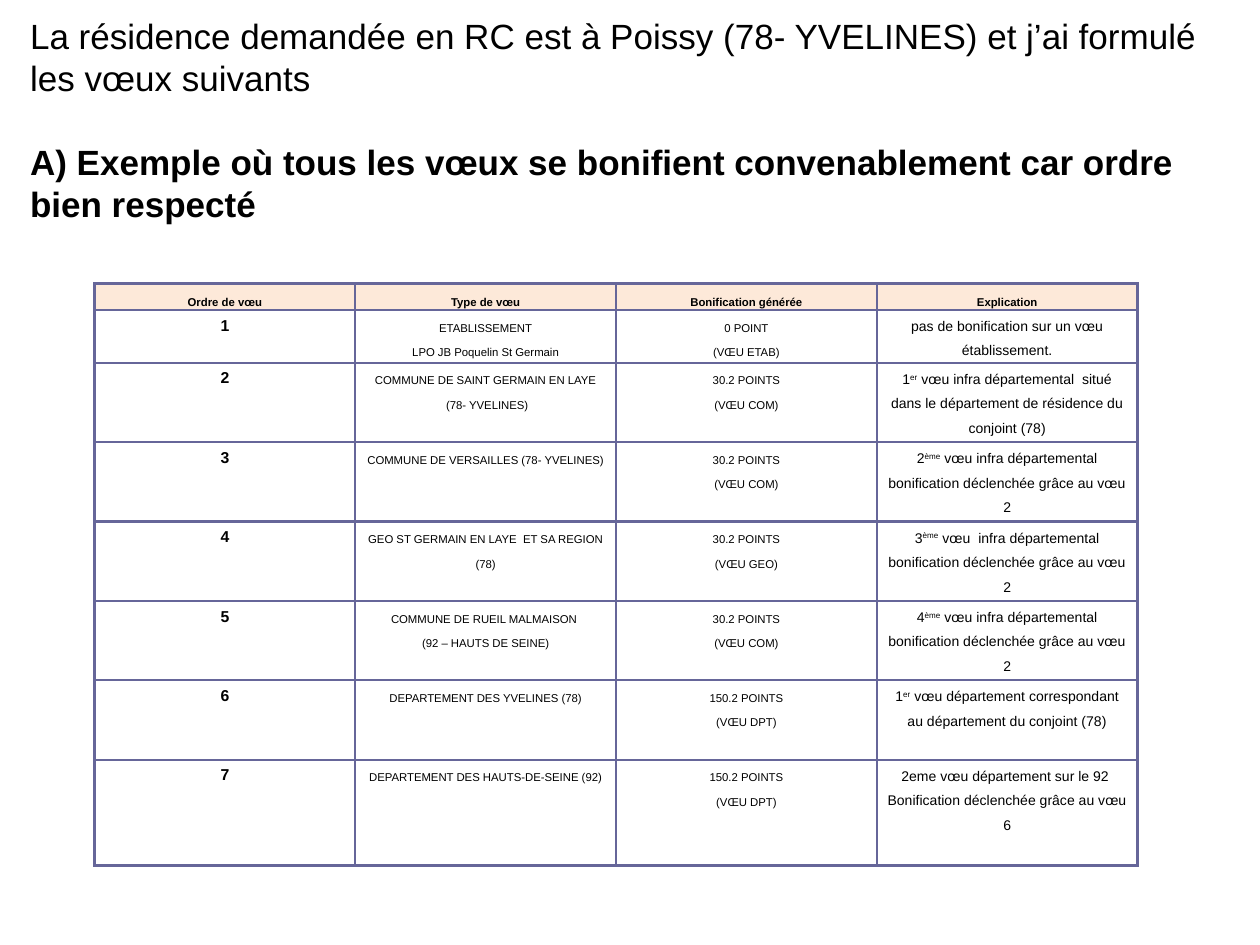
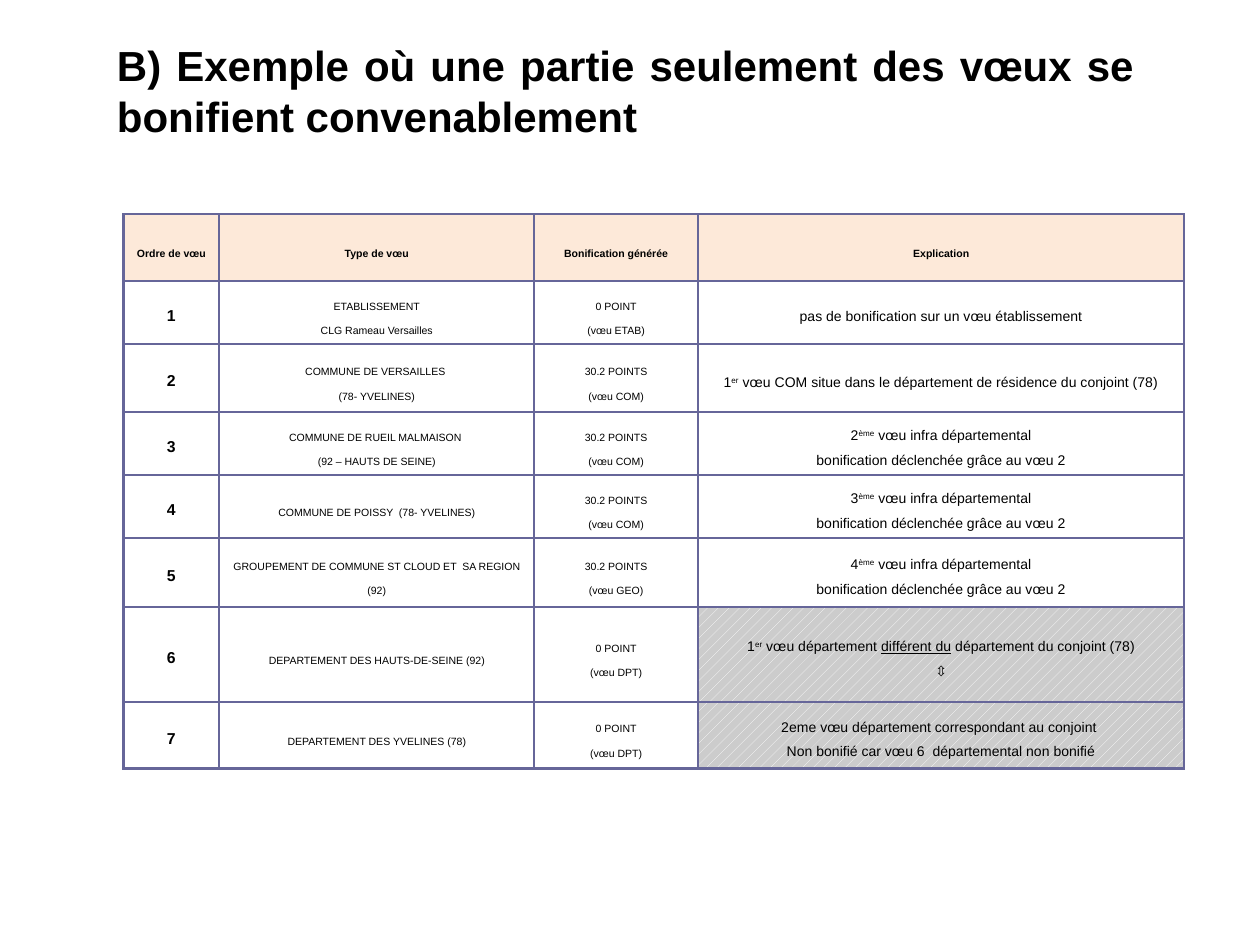
"""Build two slides comparing how the order of transfer wishes affects their bonus points."""
from dataclasses import dataclass
from typing import NamedTuple

import lxml.etree
import pptx
import pptx.dml.color
import pptx.enum.dml
import pptx.enum.text
import pptx.oxml.ns
import pptx.util
from pptx.util import Inches

BLACK = pptx.dml.color.RGBColor(0x00, 0x00, 0x00)
WHITE = pptx.dml.color.RGBColor(0xFF, 0xFF, 0xFF)
HEADER_FILL = pptx.dml.color.RGBColor(0xFD, 0xE9, 0xD9)
WARNING_FILL = pptx.dml.color.RGBColor(0xCC, 0xCC, 0xCC)
BORDER = pptx.dml.color.RGBColor(0x66, 0x66, 0x99)

FONT = "Arial"
HEADERS = ("Ordre de vœu", "Type de vœu", "Bonification générée", "Explication")
ORDER_SIZE = 9
EXPLANATION_SIZE = 8
CELL_LINE_SPACING = 14
TITLE_LINE_RATIO = 1.2

Align = pptx.enum.text.PP_ALIGN
Anchor = pptx.enum.text.MSO_ANCHOR


class Run(NamedTuple):
    """A stretch of text with one style."""

    text: str
    superscript: bool = False
    underline: bool = False


Line = tuple[Run, ...]


class TextStyle(NamedTuple):
    """The look of a paragraph."""

    size: float
    bold: bool
    alignment: Align
    line_spacing: float


class Wish(NamedTuple):
    """One table row: the wish, its bonus and the reason."""

    kind: tuple[str, ...]
    points: str
    scope: str
    explanation: tuple[Line, ...]
    warning: bool = False


@dataclass(frozen=True)
class WishTable:
    """A table of ranked wishes."""

    left: float
    top: float
    column_widths: tuple[float, ...]
    row_heights: tuple[float, ...]
    small_size: float
    body_anchor: Anchor
    wish_word: str
    wishes: tuple[Wish, ...]


@dataclass(frozen=True)
class Title:
    """A slide title whose paragraphs are (text, bold) pairs."""

    box: tuple[float, float, float, float]
    size: float
    alignment: Align
    paragraphs: tuple[tuple[str, bool], ...]


def plain(*texts: str) -> tuple[Line, ...]:
    """Turn each text into a line of one run."""
    return tuple((Run(text),) for text in texts)


def ordinal(number: int, rest: str) -> Line:
    """Write a French ordinal with its raised ending, then the rest."""
    return Run(str(number)), Run("er" if number == 1 else "ème", superscript=True), Run(rest)


def triggered(number: int, rest: str = " vœu infra départemental") -> tuple[Line, ...]:
    """Explain a bonus that wish 2 sets off."""
    return ordinal(number, rest), *plain("bonification déclenchée grâce au vœu 2")


RUEIL = ("COMMUNE DE RUEIL MALMAISON ", "(92 – HAUTS DE SEINE)")
YVELINES = ("DEPARTEMENT DES YVELINES (78)",)
HAUTS_DE_SEINE = ("DEPARTEMENT DES HAUTS-DE-SEINE (92)",)

GOOD_TITLE = Title(
    (0.14, 0.06, 9.49, 1.78), 20, Align.LEFT,
    (("La résidence demandée en RC est à Poissy (78- YVELINES) et j’ai formulé les vœux suivants", False),
     ("A) Exemple où tous les vœux se bonifient convenablement car ordre bien respecté ", True)),
)
GOOD_ORDER = WishTable(
    0.75, 2.25, (2.07,) * 4, (0.21, 0.42, *(0.63,) * 5, 0.84), 6.5, Anchor.TOP, "VŒU",
    (
        Wish(("ETABLISSEMENT", "LPO JB Poquelin St Germain"), "0 POINT", "ETAB",
             plain("pas de bonification sur un vœu établissement.")),
        Wish(("COMMUNE DE SAINT GERMAIN EN LAYE", " (78- YVELINES)"), "30.2 POINTS", "COM",
             (ordinal(1, " vœu infra départemental  situé dans le département de résidence du conjoint (78)"),)),
        Wish(("COMMUNE DE VERSAILLES (78- YVELINES)",), "30.2 POINTS", "COM", triggered(2)),
        Wish(("GEO ST GERMAIN EN LAYE  ET SA REGION (78)",), "30.2 POINTS", "GEO",
             triggered(3, " vœu  infra départemental")),
        Wish(RUEIL, "30.2 POINTS", "COM", triggered(4)),
        Wish(YVELINES, "150.2 POINTS", "DPT",
             (ordinal(1, " vœu département correspondant au département du conjoint (78)"),)),
        Wish(HAUTS_DE_SEINE, "150.2 POINTS", "DPT",
             plain("2eme vœu département sur le 92 ", "Bonification déclenchée grâce au vœu 6")),
    ),
)

PARTIAL_TITLE = Title(
    (0.83, 0.26, 8.27, 0.91), 24, Align.JUSTIFY,
    (("B) Exemple où une partie seulement des vœux se bonifient convenablement ", True),),
)
PARTIAL_ORDER = WishTable(
    0.98, 1.7, (0.76, 2.5, 1.3, 3.86), (0.53, 0.5, 0.54, 0.5, 0.5, 0.55, 0.75, 0.53),
    6, Anchor.MIDDLE, "vœu",
    (
        Wish(("ETABLISSEMENT", "CLG Rameau Versailles"), "0 POINT", "ETAB",
             plain("pas de bonification sur un vœu établissement")),
        Wish(("COMMUNE DE VERSAILLES ", "(78- YVELINES)"), "30.2 POINTS", "COM",
             (ordinal(1, " vœu COM situe dans le département de résidence du conjoint (78)"),)),
        Wish(RUEIL, "30.2 POINTS", "COM", triggered(2)),
        Wish(("COMMUNE DE POISSY  (78- YVELINES)",), "30.2 POINTS", "COM", triggered(3)),
        Wish(("GROUPEMENT DE COMMUNE ST CLOUD ET  SA REGION (92)",), "30.2 POINTS", "GEO", triggered(4)),
        Wish(HAUTS_DE_SEINE, "0 POINT", "DPT",
             ((*ordinal(1, " vœu département "), Run("différent du", underline=True),
               Run(" département du conjoint (78)")), *plain("⇳")), warning=True),
        Wish(YVELINES, "0 POINT", "DPT",
             plain("2eme vœu département correspondant au conjoint ",
                   "Non bonifié car vœu 6  départemental non bonifié"), warning=True),
    ),
)


def write_line(paragraph: pptx.text.text._Paragraph, line: Line, style: TextStyle) -> None:
    """Fill a paragraph run by run."""
    paragraph.alignment = style.alignment
    paragraph.line_spacing = pptx.util.Pt(style.line_spacing)
    for part in line:
        run = paragraph.add_run()
        run.text = part.text
        run.font.name = FONT
        run.font.size = pptx.util.Pt(style.size)
        run.font.bold = style.bold
        run.font.color.rgb = BLACK
        if part.underline:
            run.font.underline = True
        if part.superscript:
            run.font._element.set("baseline", "30000")


def add_title(slide: pptx.slide.Slide, title: Title) -> None:
    """Add the title, with one empty line's height between paragraphs."""
    frame = slide.shapes.add_textbox(*map(Inches, title.box)).text_frame
    frame.word_wrap = True
    frame.vertical_anchor = Anchor.MIDDLE
    line_spacing = title.size * TITLE_LINE_RATIO
    for index, (text, bold) in enumerate(title.paragraphs):
        paragraph = frame.add_paragraph() if index else frame.paragraphs[0]
        write_line(paragraph, (Run(text),), TextStyle(title.size, bold, title.alignment, line_spacing))
        if index:
            paragraph.space_before = pptx.util.Pt(line_spacing)


def add_borders(cell: pptx.table._Cell) -> None:
    """Draw the four borders of a cell."""
    properties = cell._tc.get_or_add_tcPr()
    qualified = pptx.oxml.ns.qn
    for side in ("a:lnL", "a:lnR", "a:lnT", "a:lnB"):
        border = lxml.etree.SubElement(properties, qualified(side), w=str(pptx.util.Pt(1.5)))
        fill = lxml.etree.SubElement(border, qualified("a:solidFill"))
        lxml.etree.SubElement(fill, qualified("a:srgbClr"), val=str(BORDER))


def fill_cell(cell: pptx.table._Cell, lines: tuple[Line, ...], size: float, bold: bool, anchor: Anchor) -> None:
    """Write centred lines in a bordered cell without fill."""
    cell.margin_left = cell.margin_right = Inches(0.07)
    cell.margin_top = cell.margin_bottom = 0
    cell.vertical_anchor = anchor
    add_borders(cell)
    cell.fill.background()
    style = TextStyle(size, bold, Align.CENTER, CELL_LINE_SPACING)
    for index, line in enumerate(lines):
        paragraph = cell.text_frame.add_paragraph() if index else cell.text_frame.paragraphs[0]
        write_line(paragraph, line, style)


def add_wish_table(slide: pptx.slide.Slide, content: WishTable) -> None:
    """Add the header row and one row for each wish."""
    table = slide.shapes.add_table(
        len(content.row_heights), len(HEADERS), Inches(content.left), Inches(content.top),
        Inches(sum(content.column_widths)), Inches(sum(content.row_heights)),
    ).table
    table.first_row = table.horz_banding = False
    for column, width in zip(table.columns, content.column_widths):
        column.width = Inches(width)
    for row, height in zip(table.rows, content.row_heights):
        row.height = Inches(height)

    for index, header in enumerate(HEADERS):
        cell = table.cell(0, index)
        fill_cell(cell, plain(header), content.small_size, True, Anchor.MIDDLE)
        cell.fill.solid()
        cell.fill.fore_color.rgb = HEADER_FILL

    for rank, wish in enumerate(content.wishes, start=1):
        bonus = plain(wish.points, f"({content.wish_word} {wish.scope})")
        columns = (
            (plain(str(rank)), ORDER_SIZE, True),
            (plain(*wish.kind), content.small_size, False),
            (bonus, content.small_size, False),
            (wish.explanation, EXPLANATION_SIZE, False),
        )
        for index, (lines, size, bold) in enumerate(columns):
            fill_cell(table.cell(rank, index), lines, size, bold, content.body_anchor)
        if wish.warning:
            fill = table.cell(rank, len(HEADERS) - 1).fill
            fill.patterned()
            fill.pattern = pptx.enum.dml.MSO_PATTERN.PERCENT_20
            fill.fore_color.rgb = WHITE
            fill.back_color.rgb = WARNING_FILL


def main() -> None:
    """Build and save the presentation."""
    presentation = pptx.Presentation()
    presentation.slide_width = Inches(10)
    presentation.slide_height = Inches(7.5)
    for title, wish_table in ((GOOD_TITLE, GOOD_ORDER), (PARTIAL_TITLE, PARTIAL_ORDER)):
        slide = presentation.slides.add_slide(presentation.slide_layouts[6])
        add_title(slide, title)
        add_wish_table(slide, wish_table)
    presentation.save("out.pptx")


if __name__ == "__main__":
    main()
